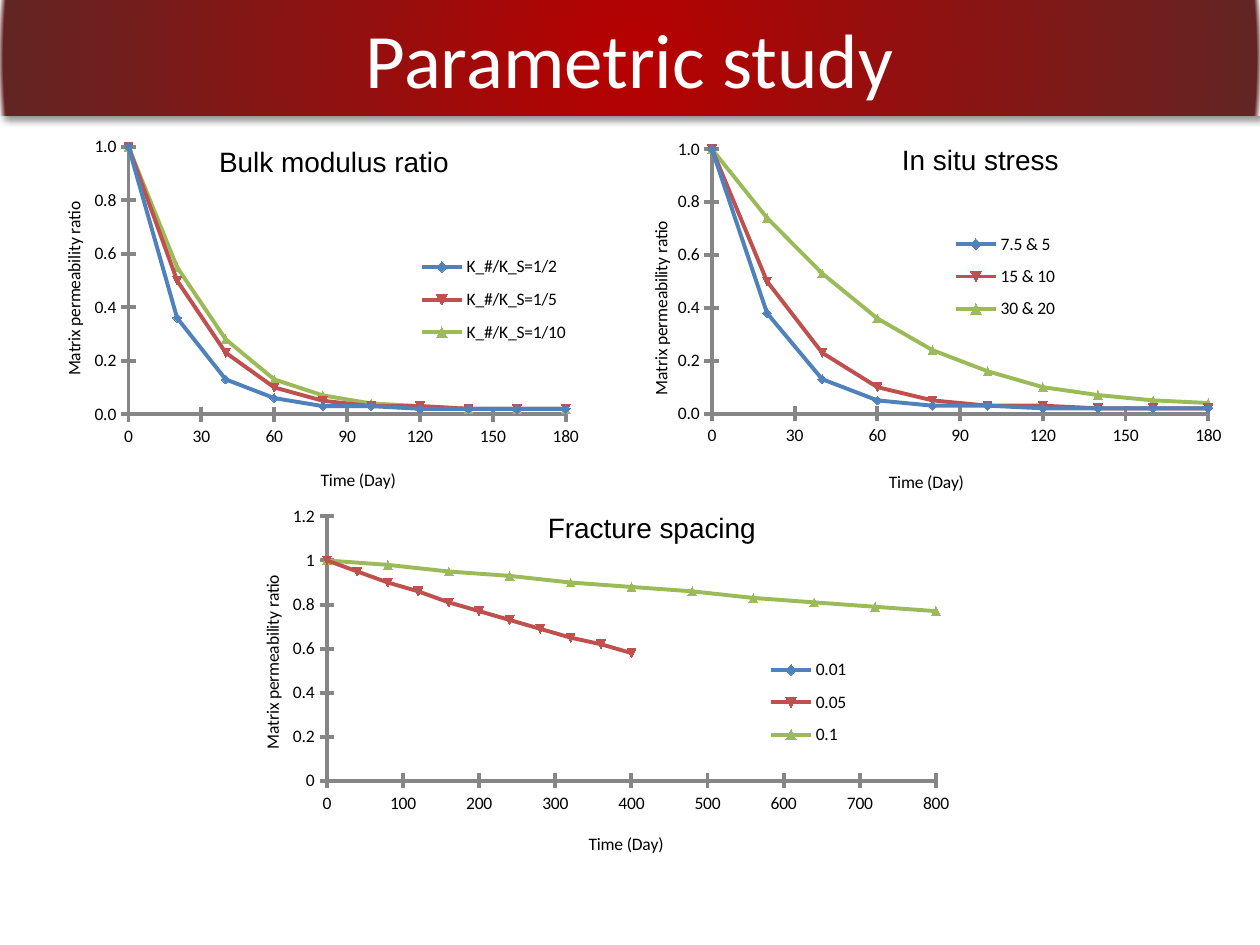
from lxml import etree
from pptx import Presentation
from pptx.chart.data import XyChartData
from pptx.dml.color import RGBColor
from pptx.enum.chart import XL_CHART_TYPE as ChartType
from pptx.enum.chart import XL_LEGEND_POSITION as LegendPosition
from pptx.enum.chart import XL_TICK_MARK as TickMark
from pptx.enum.shapes import MSO_SHAPE as Shape
from pptx.enum.text import MSO_ANCHOR as Anchor
from pptx.enum.text import MSO_AUTO_SIZE as AutoSize
from pptx.enum.text import PP_ALIGN as Align
from pptx.oxml import parse_xml
from pptx.oxml.ns import nsdecls, qn
from pptx.util import Inches, Pt

BLACK = RGBColor(0x00, 0x00, 0x00)
WHITE = RGBColor(0xFF, 0xFF, 0xFF)
AXIS_GRAY = RGBColor(0x86, 0x86, 0x86)
BLUE = RGBColor(0x4F, 0x81, 0xBD)
RED = RGBColor(0xC0, 0x50, 0x4D)
GREEN = RGBColor(0x9B, 0xBB, 0x59)
SERIES_COLORS = (BLUE, RED, GREEN)
HEADER_STOPS = ((0, "B70000"), (99, "632523"), (100, "FFFFFF"))

TITLE = "Parametric study"
TIME_TITLE, RATIO_TITLE = "Time (Day)", "Matrix permeability ratio"
BASE_CURVE = [1, 0.5, 0.23, 0.1, 0.05, 0.03, 0.03, 0.02, 0.02, 0.02]

# Boxes are in inches; plot, legend and title places are shares of the chart.
# Each series is (name, step in days, values).
CHARTS = [
    {
        "box": (4.83, 1.1, 5, 3), "label": "In situ stress", "label_box": (7.06, 1.08, 1.67, 0.37),
        "plot": (0.164, 0.028, 0.788, 0.7), "legend": (0.51, 0.22, 0.24, 0.29),
        "time_title": (0.44, 0.87), "ratio_title": (0.06, 0.21),
        "time_axis": {"maximum_scale": 180, "major_unit": 30},
        "ratio_axis": {"maximum_scale": 1, "major_unit": 0.2}, "format": "#,##0.0",
        "series": [
            ("7.5 & 5", 20, [1, 0.38, 0.13, 0.05, 0.03, 0.03, 0.02, 0.02, 0.02, 0.02]),
            ("15 & 10", 20, BASE_CURVE),
            ("30 & 20", 20, [1, 0.74, 0.53, 0.36, 0.24, 0.16, 0.1, 0.07, 0.05, 0.04]),
        ],
    },
    {
        "box": (1.75, 4, 5.91, 3), "label": "Fracture spacing", "label_box": (4.25, 4, 2, 0.37),
        "plot": (0.143, 0.033, 0.818, 0.7), "legend": (0.71, 0.38, 0.16, 0.29),
        "time_title": (0.49, 0.86), "ratio_title": (0.05, 0.18),
        "time_axis": {"maximum_scale": 800}, "ratio_axis": {}, "format": "General",
        "series": [
            ("0.01", 20, BASE_CURVE),
            ("0.05", 40, [1, 0.95, 0.9, 0.86, 0.81, 0.77, 0.73, 0.69, 0.65, 0.62, 0.58]),
            ("0.1", 80, [1, 0.98, 0.95, 0.93, 0.9, 0.88, 0.86, 0.83, 0.81, 0.79, 0.77]),
        ],
    },
    {
        "box": (0.17, 0.97, 5, 3.03), "label": "Bulk modulus ratio", "label_box": (1.64, 1.1, 2.25, 0.37),
        "plot": (0.17, 0.065, 0.694, 0.7), "legend": (0.58, 0.32, 0.34, 0.29),
        "time_title": (0.47, 0.9), "ratio_title": (0.06, 0.2),
        "time_axis": {"minimum_scale": 0, "maximum_scale": 180, "major_unit": 30},
        "ratio_axis": {"maximum_scale": 1, "major_unit": 0.2}, "format": "#,##0.0",
        "series": [
            ("K_#/K_S=1/2", 20, [1, 0.36, 0.13, 0.06, 0.03, 0.03, 0.02, 0.02, 0.02, 0.02]),
            ("K_#/K_S=1/5", 20, BASE_CURVE),
            ("K_#/K_S=1/10", 20, [1, 0.55, 0.28, 0.13, 0.07, 0.04, 0.03, 0.02, 0.02, 0.02]),
        ],
    },
]


def inches(box):
    return [Inches(length) for length in box]


def set_font(font, name, size, color):
    font.name, font.size, font.bold = name, Pt(size), False
    font.color.rgb = color


def place(element, index, shares, inner=False):
    """Give a chart part a manual layout, as its child at the given index."""
    for old in element.findall(qn("c:layout")):
        element.remove(old)
    layout = parse_xml(f"<c:layout {nsdecls('c')}><c:manualLayout/></c:layout>")
    settings = [("layoutTarget", "inner")] if inner else []
    settings += [("xMode", "edge"), ("yMode", "edge"), *zip("xywh", shares)]
    for tag, value in settings:
        etree.SubElement(layout[0], qn(f"c:{tag}")).set("val", str(value))
    element.insert(index, layout)


def add_header(slide, width):
    header = slide.shapes.add_shape(Shape.RECTANGLE, 0, 0, width, Inches(0.92))
    header.line.fill.background()
    stops = "".join(
        f'<a:gs pos="{share * 1000}"><a:srgbClr val="{color}"/></a:gs>'
        for share, color in HEADER_STOPS
    )
    properties = header._element.spPr
    properties.insert(2, parse_xml(
        f'<a:gradFill {nsdecls("a")} rotWithShape="1"><a:gsLst>{stops}</a:gsLst>'
        '<a:path path="circle"><a:fillToRect l="50000" t="50000" r="50000" b="50000"/>'
        "</a:path></a:gradFill>"
    ))
    properties.append(parse_xml(
        f'<a:effectLst {nsdecls("a")}><a:outerShdw blurRad="{Pt(4)}" dist="{Pt(3)}" '
        'dir="2700000" algn="tl" rotWithShape="0"><a:srgbClr val="000000">'
        '<a:alpha val="43000"/></a:srgbClr></a:outerShdw></a:effectLst>'
    ))
    frame = header.text_frame
    frame.text = TITLE
    frame.vertical_anchor = Anchor.MIDDLE
    paragraph = frame.paragraphs[0]
    paragraph.alignment = Align.CENTER
    set_font(paragraph.font, "Calibri", 44, WHITE)


def style_axis(axis, title, title_place, scale):
    axis.has_major_gridlines = False
    axis.major_tick_mark = TickMark.CROSS
    axis.minor_tick_mark = TickMark.NONE
    axis.format.line.color.rgb = AXIS_GRAY
    axis.format.line.width = Pt(2.25)
    for name, value in scale.items():
        setattr(axis, name, value)
    frame = axis.axis_title.text_frame
    frame.text = title
    set_font(frame.paragraphs[0].font, "Calibri", 10, BLACK)
    place(axis.axis_title._element, 1, title_place)


def add_scatter(slide, content):
    data = XyChartData()
    for name, step, values in content["series"]:
        series = data.add_series(name)
        for number, value in enumerate(values):
            series.add_data_point(number * step, value)
    chart = slide.shapes.add_chart(
        ChartType.XY_SCATTER_SMOOTH, *inches(content["box"]), data
    ).chart
    chart.has_title = False
    set_font(chart.font, "Calibri", 10, BLACK)
    chart.plots[0].vary_by_categories = False
    for series, color in zip(chart.plots[0].series, SERIES_COLORS):
        series.format.line.color.rgb = color
        series.format.line.width = Pt(2.25)
        series.marker.format.fill.solid()
        series.marker.format.fill.fore_color.rgb = color
        series.marker.format.line.color.rgb = color
    style_axis(chart.category_axis, TIME_TITLE, content["time_title"], content["time_axis"])
    style_axis(chart.value_axis, RATIO_TITLE, content["ratio_title"], content["ratio_axis"])
    labels = chart.value_axis.tick_labels
    labels.number_format, labels.number_format_is_linked = content["format"], False
    chart.has_legend = True
    chart.legend.position = LegendPosition.RIGHT
    chart.legend.include_in_layout = False
    place(chart.legend._element, 1, content["legend"])
    place(chart._chartSpace.chart.plotArea, 0, content["plot"], inner=True)


def add_label(slide, text, box):
    frame = slide.shapes.add_textbox(*inches(box)).text_frame
    frame.word_wrap = True
    frame.auto_size = AutoSize.SHAPE_TO_FIT_TEXT
    frame.text = text
    set_font(frame.paragraphs[0].font, "Arial", 16, BLACK)


def main():
    presentation = Presentation()
    presentation.slide_width, presentation.slide_height = Inches(10), Inches(7.5)
    slide = presentation.slides.add_slide(presentation.slide_layouts[6])
    add_header(slide, presentation.slide_width)
    for content in CHARTS:
        add_scatter(slide, content)
        add_label(slide, content["label"], content["label_box"])
    presentation.save("out.pptx")


if __name__ == "__main__":
    main()
